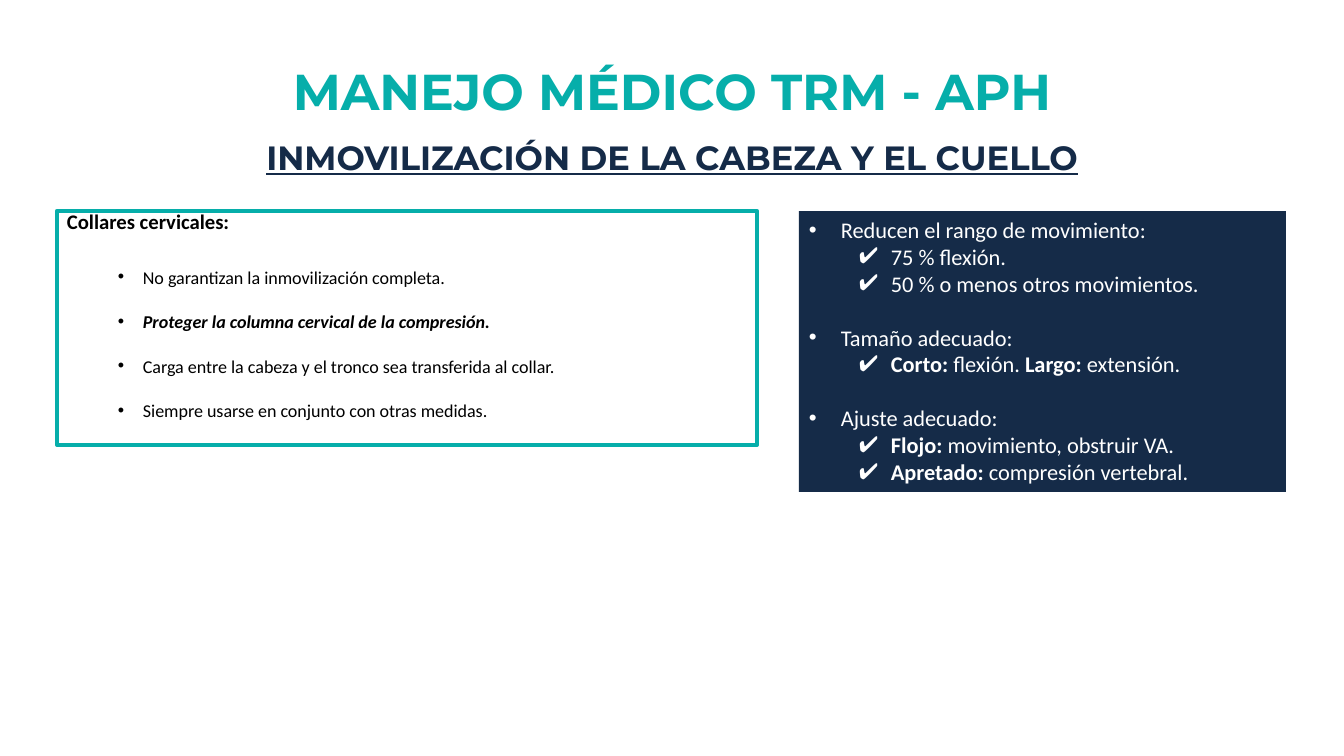
from dataclasses import dataclass, field
from typing import Any

from lxml import etree
from pptx import Presentation
from pptx.dml.color import RGBColor
from pptx.enum.shapes import MSO_SHAPE
from pptx.enum.text import MSO_ANCHOR, PP_ALIGN
from pptx.oxml.ns import qn
from pptx.util import Emu, Pt

RECT = MSO_SHAPE.RECTANGLE
TOP, MIDDLE = MSO_ANCHOR.TOP, MSO_ANCHOR.MIDDLE
LEFT, CENTER = PP_ALIGN.LEFT, PP_ALIGN.CENTER

TEAL = RGBColor(0x06, 0xAE, 0xAA)
NAVY = RGBColor(0x15, 0x2B, 0x48)
WHITE = RGBColor(0xFF, 0xFF, 0xFF)
BLACK = RGBColor(0x00, 0x00, 0x00)


def px(num: int) -> Emu:
    return Emu(round(num * 9144000 / 1008))


@dataclass
class Para:
    runs: list[tuple[str, dict[str, Any]]]
    font: dict[str, Any]
    form: dict[str, Any] = field(default_factory=dict)
    bullet: str = ""
    indent: int = 0
    hang: int = 0


@dataclass
class Box:
    place: tuple[int, int, int, int]
    paras: list[Para]
    fill: RGBColor | None = None
    line: RGBColor | None = None
    anchor: Any = TOP


def style(item: Any, values: dict[str, Any]) -> None:
    for name, value in values.items():
        if name == "color":
            item.color.rgb = value
        else:
            setattr(item, name, value)


def mark(para: Any, data: Para) -> None:
    props = para._p.get_or_add_pPr()
    props.set("marL", str(px(data.indent)))
    props.set("indent", str(-px(data.hang)))
    tint = etree.SubElement(props, qn("a:buClr"))
    etree.SubElement(tint, qn("a:srgbClr")).set("val", str(data.font["color"]))
    etree.SubElement(props, qn("a:buFont")).set("typeface", "Arial")
    etree.SubElement(props, qn("a:buChar")).set("char", data.bullet)


def draw(slide: Any, box: Box) -> None:
    area = [px(num) for num in box.place]
    if box.fill is None:
        shape = slide.shapes.add_textbox(*area)
    else:
        shape = slide.shapes.add_shape(RECT, *area)
        shape.shadow.inherit = False
        shape.fill.solid()
        shape.fill.fore_color.rgb = box.fill
        if box.line is None:
            shape.line.fill.background()
        else:
            shape.line.color.rgb = box.line
            shape.line.width = Pt(3)
    frame = shape.text_frame
    style(frame, {"word_wrap": True, "vertical_anchor": box.anchor})
    for index, data in enumerate(box.paras):
        para = frame.paragraphs[0] if index == 0 else frame.add_paragraph()
        style(para, {"alignment": LEFT} | data.form)
        if data.bullet:
            mark(para, data)
        for text, extra in data.runs:
            run = para.add_run()
            run.text = text
            style(run.font, data.font | extra)


# Text formats
BOLD = {"bold": True}
HEAD = {"name": "Montserrat", "bold": True}
BODY = {"name": "Calibri", "size": Pt(12.9), "color": BLACK}
SIDE = {"name": "Calibri", "size": Pt(16), "color": WHITE}


def point(text: str, gap: float, **extra: Any) -> Para:
    form = {"line_spacing": 0.7, "space_before": Pt(gap)}
    return Para([(text, extra)], BODY, form, "•", 76, 25)


def topic(text: str, gap: float = 0) -> Para:
    return Para([(text, {})], SIDE, {"space_before": Pt(gap)}, "•", 32, 32)


def check(*runs: tuple[str, dict[str, Any]]) -> Para:
    return Para(list(runs), SIDE, {}, "✔", 82, 32)


# Headings
title = Box((231, 31, 882, 126), [
    Para([("MANEJO MÉDICO TRM - APH", {})],
         HEAD | {"size": Pt(36), "color": TEAL},
         {"alignment": CENTER, "line_spacing": 0.9}),
], anchor=MIDDLE)
topline = Box((251, 132, 842, 50), [
    Para([("INMOVILIZACIÓN DE LA CABEZA Y EL CUELLO", {})],
         HEAD | {"size": Pt(24), "color": NAVY, "underline": True},
         {"alignment": CENTER}),
])

# Framed list of collar facts
collars = Box((57, 211, 700, 234), [
    Para([("Collares cervicales:", BOLD)],
         BODY | {"size": Pt(14.8)}, {"line_spacing": 0.7}),
    point("No garantizan la inmovilización completa.", 27.6),
    point("Proteger la columna cervical de la compresión.", 21,
          bold=True, italic=True),
    point("Carga entre la cabeza y el tronco sea transferida al collar.", 21),
    point("Siempre usarse en conjunto con otras medidas.", 21),
], WHITE, TEAL)

# Dark panel with fit and size
panel = Box((799, 211, 487, 281), [
    topic("Reducen el rango de movimiento:"),
    check(("75 % flexión.", {})),
    check(("50 % o menos otros movimientos.", {})),
    topic("Tamaño adecuado:", 19.4),
    check(("Corto:", BOLD), (" flexión. ", {}),
          ("Largo:", BOLD), (" extensión.", {})),
    topic("Ajuste adecuado:", 19.4),
    check(("Flojo:", BOLD), (" movimiento, obstruir VA.", {})),
    check(("Apretado:", BOLD), (" compresión vertebral.", {})),
], NAVY)


def main() -> None:
    deck = Presentation()
    deck.slide_width, deck.slide_height = px(1344), px(756)
    slide = deck.slides.add_slide(deck.slide_layouts[6])
    for box in (title, collars, panel, topline):
        draw(slide, box)
    deck.save("out.pptx")


if __name__ == "__main__":
    main()
